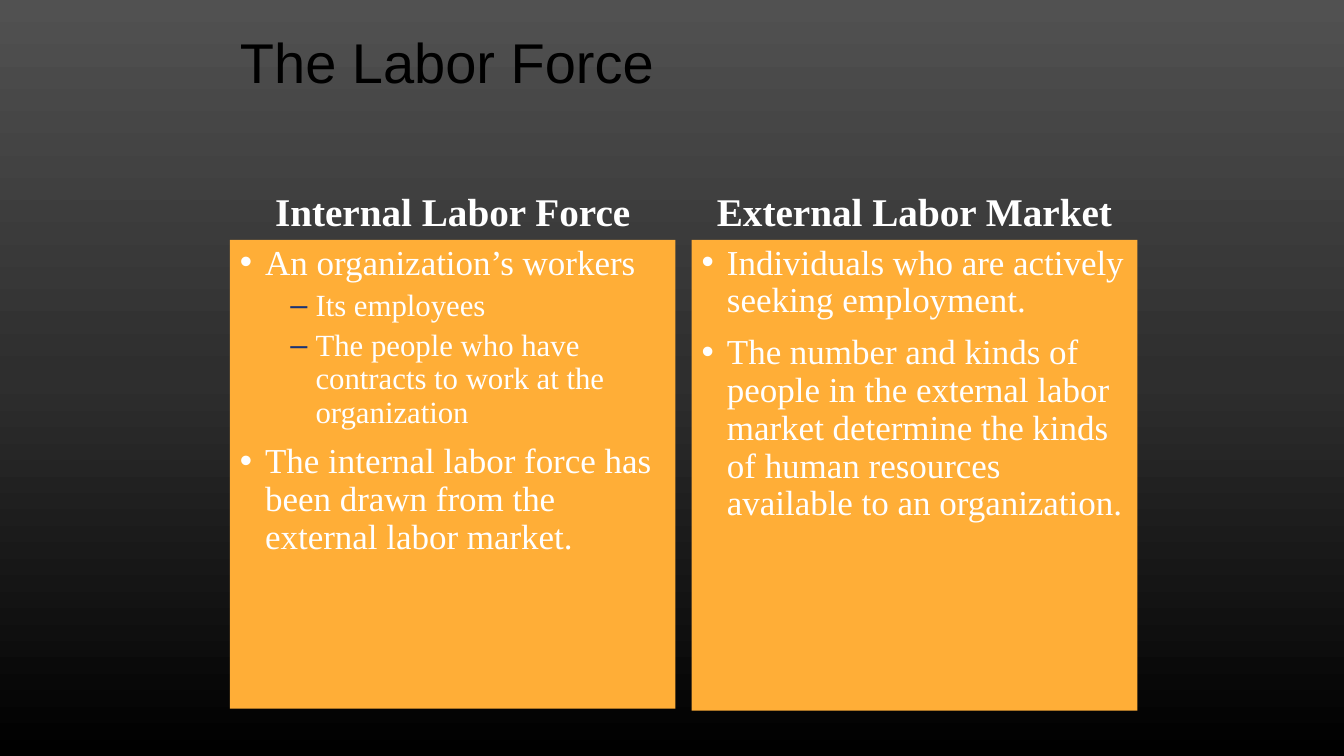
from copy import deepcopy

from lxml import etree
from pptx import Presentation, util as u
from pptx.dml.color import RGBColor
from pptx.enum import text
from pptx.oxml.ns import qn

COLORS = {"title": "000000", "text": "FFFFFF", "panel": "FFAE37", "dash": "193374"}
BACKDROP = [(0, "515151"), (0.5, "2E2E2E"), (1, "000000")]
LEFT, COLUMN, GAP = 2.28, 4.42, 0.16
HEAD_TOP, HEAD_HEIGHT = 1.68, 0.7
# Per level: bullet, bullet colour, left margin, size, space before
LEVELS = [("•", "text", 0.25, 25, 10), ("–", "dash", 0.75, 22, 5)]

COLUMNS = [
    ("Internal Labor Force", 4.65, [
        (0, "An organization’s workers"),
        (1, "Its employees"),
        (1, "The people who have contracts to work at the organization"),
        (0, "The internal labor force has been drawn from the external labor market."),
    ]),
    ("External Labor Market", 4.67, [
        (0, "Individuals who are actively seeking employment."),
        (0, "The number and kinds of people in the external labor market determine "
            "the kinds of human resources available to an organization."),
    ]),
]


def place(holder, left, top, width, height, anchor):
    holder.left, holder.top = u.Inches(left), u.Inches(top)
    holder.width, holder.height = u.Inches(width), u.Inches(height)
    frame = holder.text_frame
    frame.word_wrap = True
    frame.auto_size = text.MSO_AUTO_SIZE.NONE
    frame.vertical_anchor = anchor
    return frame


def style(paragraph, size, font_name, color, before, align, bold=False):
    paragraph.alignment = align
    paragraph.line_spacing = 0.9
    paragraph.space_before = u.Pt(before)
    for run in paragraph.runs:
        run.font.size, run.font.name, run.font.bold = u.Pt(size), font_name, bold
        run.font.color.rgb = RGBColor.from_string(COLORS[color])


prs = Presentation()
prs.slide_width, prs.slide_height = u.Inches(13.33), u.Inches(7.5)
slide = prs.slides.add_slide(prs.slide_layouts.get_by_name("Comparison"))
title, *column_holders = slide.placeholders

backdrop = slide.background.fill
backdrop.gradient()
backdrop.gradient_angle = 270
stop_list = next(slide.element.iter(qn("a:gsLst")))
stop_list.insert(1, deepcopy(stop_list[0]))
for stop, (position, color) in zip(backdrop.gradient_stops, BACKDROP):
    stop.position = position
    stop.color.rgb = RGBColor.from_string(color)

title_frame = place(title, LEFT, 0.3, 2 * COLUMN + GAP, 1.25, text.MSO_ANCHOR.TOP)
title_frame.text = "The Labor Force"
style(title_frame.paragraphs[0], 40, "Arial", "title", 0, text.PP_ALIGN.LEFT)

for col, (heading, panel_height, points) in enumerate(COLUMNS):
    head, panel = column_holders[2 * col:2 * col + 2]
    left = LEFT + col * (COLUMN + GAP)

    head_frame = place(head, left, HEAD_TOP, COLUMN, HEAD_HEIGHT, text.MSO_ANCHOR.BOTTOM)
    head_frame.text = heading
    style(head_frame.paragraphs[0], 28, "Times New Roman", "text", 10,
          text.PP_ALIGN.CENTER, bold=True)

    panel_frame = place(panel, left, HEAD_TOP + HEAD_HEIGHT, COLUMN, panel_height,
                        text.MSO_ANCHOR.TOP)
    panel.fill.solid()
    panel.fill.fore_color.rgb = RGBColor.from_string(COLORS["panel"])
    panel_frame.text = "\n".join(point for _, point in points)
    for paragraph, (level, _) in zip(panel_frame.paragraphs, points):
        bullet, bullet_color, margin, size, before = LEVELS[level]
        paragraph.level = level
        style(paragraph, size, "Times New Roman", "text", before, text.PP_ALIGN.LEFT)
        props = paragraph._p.get_or_add_pPr()
        props.set("marL", str(u.Inches(margin)))
        props.set("indent", str(u.Inches(-0.25)))
        tint = etree.SubElement(props, qn("a:buClr"))
        etree.SubElement(tint, qn("a:srgbClr"), val=COLORS[bullet_color])
        etree.SubElement(props, qn("a:buFont"), typeface="Arial")
        etree.SubElement(props, qn("a:buChar"), char=bullet)

prs.save("out.pptx")
